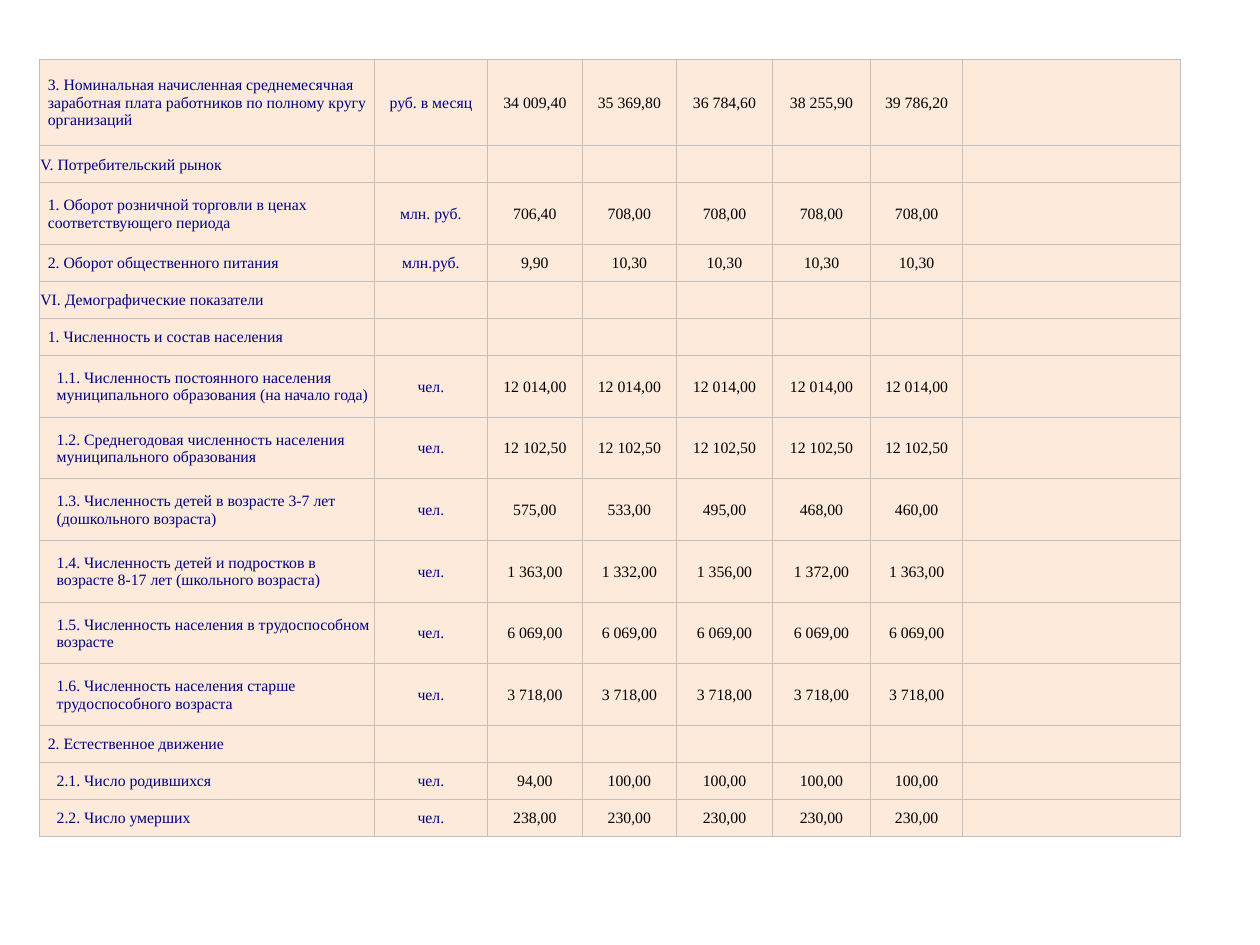
from dataclasses import dataclass

from lxml.etree import SubElement
from pptx import Presentation
from pptx.dml.color import RGBColor
from pptx.enum.text import MSO_ANCHOR, PP_ALIGN
from pptx.oxml.ns import qn
from pptx.table import _Cell
from pptx.util import Inches, Pt

COLORS = {"fill": "FDEADA", "border": "C0C0C0", "label": "000080", "value": "000000"}
FONT = "Times New Roman"
FONT_SIZE = Pt(9)
BORDER_WIDTH = Pt(0.5)
LEFT, TOP, HEIGHT = 0.31, 0.47, 6.17
COLUMNS = [2.66, 0.9, 0.75, 0.75, 0.76, 0.78, 0.73, 1.73]
INDENTS = [0.01, 0.07, 0.14]


@dataclass
class Indicator:
    name: str
    level: int
    lines: int = 1
    unit: str = ""
    values: tuple[str, ...] = ()

    @property
    def height(self) -> float:
        return self.lines + 0.5


INDICATORS = [
    Indicator("3. Номинальная начисленная среднемесячная заработная плата работников по полному кругу организаций",
              1, 3, "руб. в месяц", ("34 009,40", "35 369,80", "36 784,60", "38 255,90", "39 786,20")),
    Indicator("V. Потребительский рынок", 0),
    Indicator("1. Оборот розничной торговли в ценах соответствующего периода",
              1, 2, "млн. руб.", ("706,40", *["708,00"] * 4)),
    Indicator("2. Оборот общественного питания", 1, 1, "млн.руб.", ("9,90", *["10,30"] * 4)),
    Indicator("VI. Демографические показатели", 0),
    Indicator("1. Численность и состав населения", 1),
    Indicator("1.1. Численность постоянного населения муниципального образования (на начало года)",
              2, 2, "чел.", ("12 014,00",) * 5),
    Indicator("1.2. Среднегодовая численность населения муниципального образования",
              2, 2, "чел.", ("12 102,50",) * 5),
    Indicator("1.3. Численность детей в возрасте 3-7 лет (дошкольного возраста)",
              2, 2, "чел.", ("575,00", "533,00", "495,00", "468,00", "460,00")),
    Indicator("1.4. Численность детей и подростков в возрасте 8-17 лет (школьного возраста)",
              2, 2, "чел.", ("1 363,00", "1 332,00", "1 356,00", "1 372,00", "1 363,00")),
    Indicator("1.5. Численность населения в трудоспособном возрасте",
              2, 2, "чел.", ("6 069,00",) * 5),
    Indicator("1.6. Численность населения старше трудоспособного возраста",
              2, 2, "чел.", ("3 718,00",) * 5),
    Indicator("2. Естественное движение", 1),
    Indicator("2.1. Число родившихся", 2, 1, "чел.", ("94,00", *["100,00"] * 4)),
    Indicator("2.2. Число умерших", 2, 1, "чел.", ("238,00", *["230,00"] * 4)),
]


def set_borders(cell: _Cell) -> None:
    tc_pr = cell._tc.get_or_add_tcPr()
    for index, side in enumerate(("lnL", "lnR", "lnT", "lnB")):
        ln = tc_pr.makeelement(qn(f"a:{side}"), {"w": str(BORDER_WIDTH)})
        fill = SubElement(ln, qn("a:solidFill"))
        SubElement(fill, qn("a:srgbClr"), val=COLORS["border"])
        tc_pr.insert(index, ln)


def fill_cell(cell: _Cell, text: str, color: str, align: PP_ALIGN, indent: float) -> None:
    cell.fill.solid()
    cell.fill.fore_color.rgb = RGBColor.from_string(COLORS["fill"])
    set_borders(cell)
    cell.vertical_anchor = MSO_ANCHOR.MIDDLE
    cell.margin_left = Inches(indent)
    cell.margin_right = cell.margin_top = Inches(0.01)
    cell.margin_bottom = 0
    p = cell.text_frame.paragraphs[0]
    p.alignment = align
    if text:
        r = p.add_run()
        r.text = text
        r.font.name = FONT
        r.font.size = FONT_SIZE
        r.font.color.rgb = RGBColor.from_string(COLORS[color])
    else:
        SubElement(p._p, qn("a:endParaRPr"), sz=str(int(FONT_SIZE.pt * 100)))


def main() -> None:
    prs = Presentation()
    prs.slide_width, prs.slide_height = Inches(10), Inches(7.5)
    s = prs.slides.add_slide(prs.slide_layouts[6])
    table = s.shapes.add_table(
        len(INDICATORS), len(COLUMNS),
        Inches(LEFT), Inches(TOP), Inches(sum(COLUMNS)), Inches(HEIGHT),
    ).table
    table.first_row = table.horz_banding = False
    for column, width in zip(table.columns, COLUMNS):
        column.width = Inches(width)
    row_unit = HEIGHT / sum(item.height for item in INDICATORS)
    for row, item in zip(table.rows, INDICATORS):
        row.height = Inches(item.height * row_unit)
        texts = [item.name, item.unit, *item.values]
        texts += [""] * (len(COLUMNS) - len(texts))
        for col, (cell, text) in enumerate(zip(row.cells, texts)):
            fill_cell(
                cell, text,
                "label" if col < 2 else "value",
                PP_ALIGN.CENTER if col else PP_ALIGN.LEFT,
                INDENTS[0] if col else INDENTS[item.level],
            )
    prs.save("out.pptx")


if __name__ == "__main__":
    main()
